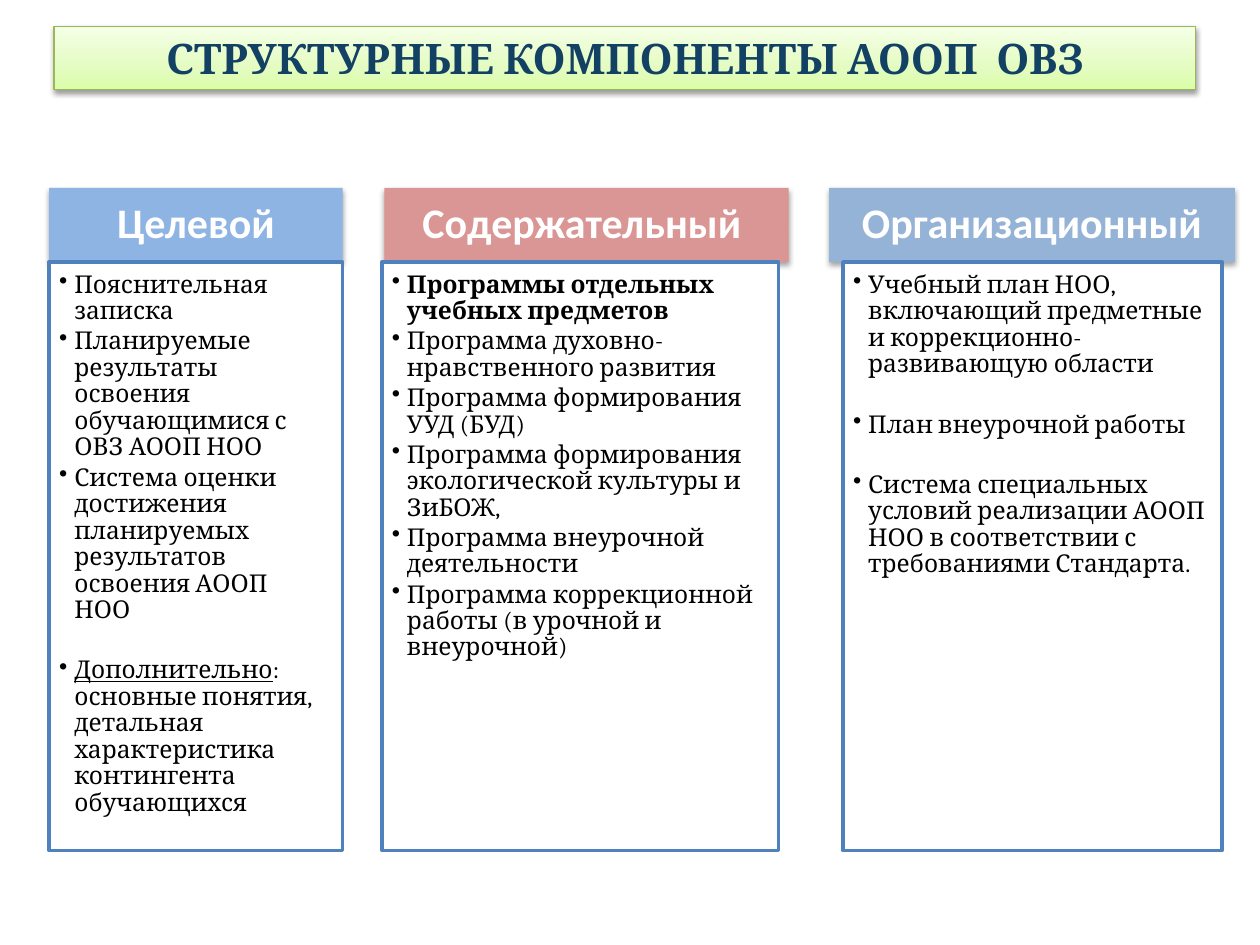
from copy import deepcopy
from dataclasses import dataclass

from lxml import etree
from pptx import Presentation
from pptx.dml.color import RGBColor
from pptx.enum import shapes, text
from pptx.oxml import ns
from pptx.util import Inches, Pt


@dataclass(frozen=True)
class Theme:
    ink: str = "000000"
    paper: str = "FFFFFF"
    edge: str = "4F81BD"
    navy: str = "134163"
    rim: str = "98B955"
    fade: tuple = ((0, "DAFDA7"), (0.35, "E4FCC2"), (1, "F5FFE7"))
    head: int = 24
    body: int = 14
    serif: str = "Cambria"
    sans: str = "Calibri"


THEME = Theme()
TITLE = "СТРУКТУРНЫЕ КОМПОНЕНТЫ АООП  ОВЗ"
HEAD_TOP, HEAD_HIGH = 1.49, 0.59
BODY_TOP, BODY_HIGH = 2.08, 4.67

# Each item is (gap above, runs); each run is (words, format).
COLUMNS = [
    dict(name="Целевой", fill="8EB4E3", head=(0.39, 2.33), body=(0.39, 2.33), items=[
        (False, [("Пояснительная записка", {})]),
        (False, [("Планируемые результаты освоения обучающимися с ОВЗ АООП НОО", {})]),
        (False, [("Система оценки достижения планируемых результатов освоения "
                  "АООП НОО", {})]),
        (True, [("Дополнительно", {"underline": True}),
                (": основные понятия, детальная характеристика контингента "
                 "обучающихся", {})]),
    ]),
    dict(name="Содержательный ", fill="D99694", head=(3.05, 3.21), body=(3.03, 3.15), items=[
        (False, [("Программы отдельных учебных предметов", {"bold": True})]),
        (False, [("Программа духовно-нравственного развития", {})]),
        (False, [("Программа формирования УУД (БУД)", {})]),
        (False, [("Программа формирования экологической культуры и ЗиБОЖ,", {})]),
        (False, [("Программа внеурочной деятельности", {})]),
        (False, [("Программа коррекционной работы (в урочной и внеурочной)", {})]),
    ]),
    dict(name="Организационный", fill="95B3D7", head=(6.58, 3.22), body=(6.69, 3.01), items=[
        (False, [("Учебный план НОО, включающий предметные и "
                  "коррекционно-развивающую области", {})]),
        (True, [("План внеурочной работы", {})]),
        (True, [("Система специальных условий реализации АООП НОО в соответствии "
                 "с требованиями Стандарта.", {})]),
    ]),
]


def assign(thing, **values):
    for key, value in values.items():
        setattr(thing, key, value)


def add_box(slide, box, fill=None, line=None, width=1):
    shape = slide.shapes.add_shape(shapes.MSO_SHAPE.RECTANGLE, *map(Inches, box))
    shape.shadow.inherit = False
    if fill:
        shape.fill.solid()
        shape.fill.fore_color.rgb = RGBColor.from_string(fill)
    if line:
        shape.line.color.rgb = RGBColor.from_string(line)
        shape.line.width = Pt(width)
    else:
        shape.line.fill.background()
    return shape


def set_frame(shape, anchor, insets):
    sides = ("margin_left", "margin_top", "margin_right", "margin_bottom")
    assign(shape.text_frame, word_wrap=True, vertical_anchor=anchor,
           **dict(zip(sides, map(Inches, insets))))
    return shape.text_frame


def add_run(para, words, size, face, color, **marks):
    run = para.add_run()
    run.text = words
    assign(run.font, size=Pt(size), name=face, **marks)
    run.font.color.rgb = RGBColor.from_string(color)


def add_shadow(shape, alpha, dist):
    """Drop a soft black shadow straight down; alpha is in percent."""
    effects = shape._element.spPr.find(ns.qn("a:effectLst"))
    outer = etree.SubElement(effects, ns.qn("a:outerShdw"), blurRad=str(Pt(3.1)),
                             dist=str(Pt(dist)), dir="5400000", rotWithShape="0")
    black = etree.SubElement(outer, ns.qn("a:srgbClr"), val="000000")
    etree.SubElement(black, ns.qn("a:alpha"), val=str(alpha * 1000))


def set_fade(shape, stops):
    """Fill upwards with any number of (position, colour) stops."""
    shape.fill.gradient()
    shape.fill.gradient_angle = 90
    group = shape._element.spPr.find(".//" + ns.qn("a:gsLst"))
    while len(group) < len(stops):
        group.append(deepcopy(group[-1]))
    for stop, (place, color) in zip(shape.fill.gradient_stops, stops):
        stop.position = place
        stop.color.rgb = RGBColor.from_string(color)


def add_bullet(para):
    props = para._p.get_or_add_pPr()
    indent = Inches(0.12)
    props.set("marL", str(indent))
    props.set("indent", str(-indent))
    etree.SubElement(props, ns.qn("a:buChar"), char="•")


def draw_title(slide, box):
    shape = add_box(slide, box, line=THEME.rim, width=0.75)
    set_fade(shape, THEME.fade)
    add_shadow(shape, 38, 1.6)
    frame = set_frame(shape, text.MSO_ANCHOR.TOP, (0.1, 0.05, 0.1, 0.05))
    frame.auto_size = text.MSO_AUTO_SIZE.SHAPE_TO_FIT_TEXT
    para = frame.paragraphs[0]
    para.alignment = text.PP_ALIGN.CENTER
    add_run(para, TITLE, THEME.head, THEME.serif, THEME.navy, bold=True)


def draw_head(slide, box, name, fill):
    shape = add_box(slide, box, fill)
    add_shadow(shape, 35, 1.8)
    frame = set_frame(shape, text.MSO_ANCHOR.MIDDLE, (0.19, 0.11, 0.19, 0.11))
    para = frame.paragraphs[0]
    assign(para, alignment=text.PP_ALIGN.CENTER, line_spacing=0.9)
    add_run(para, name, THEME.head, THEME.sans, THEME.paper, bold=True)


def draw_body(slide, box, items):
    shape = add_box(slide, box, THEME.paper, THEME.edge, 2)
    frame = set_frame(shape, text.MSO_ANCHOR.TOP, (0.08, 0.08, 0.11, 0.12))
    for index, (gap, runs) in enumerate(items):
        para = frame.add_paragraph() if index else frame.paragraphs[0]
        assign(para, level=1, alignment=text.PP_ALIGN.LEFT, line_spacing=0.9,
               space_before=Pt(17.2 if gap else 0), space_after=Pt(2.1))
        add_bullet(para)
        for words, marks in runs:
            add_run(para, words, THEME.body, THEME.serif, THEME.ink, **marks)


def draw_column(slide, name, fill, head, body, items):
    """Place a heading over its list; head and body are (left, width)."""
    draw_head(slide, (head[0], HEAD_TOP, head[1], HEAD_HIGH), name, fill)
    draw_body(slide, (body[0], BODY_TOP, body[1], BODY_HIGH), items)


def main():
    deck = Presentation()
    assign(deck, slide_width=Inches(10), slide_height=Inches(7.5))
    slide = deck.slides.add_slide(deck.slide_layouts[6])
    for column in COLUMNS:
        draw_column(slide, **column)
    draw_title(slide, (0.43, 0.21, 9.06, 0.5))
    deck.save("out.pptx")


if __name__ == "__main__":
    main()
